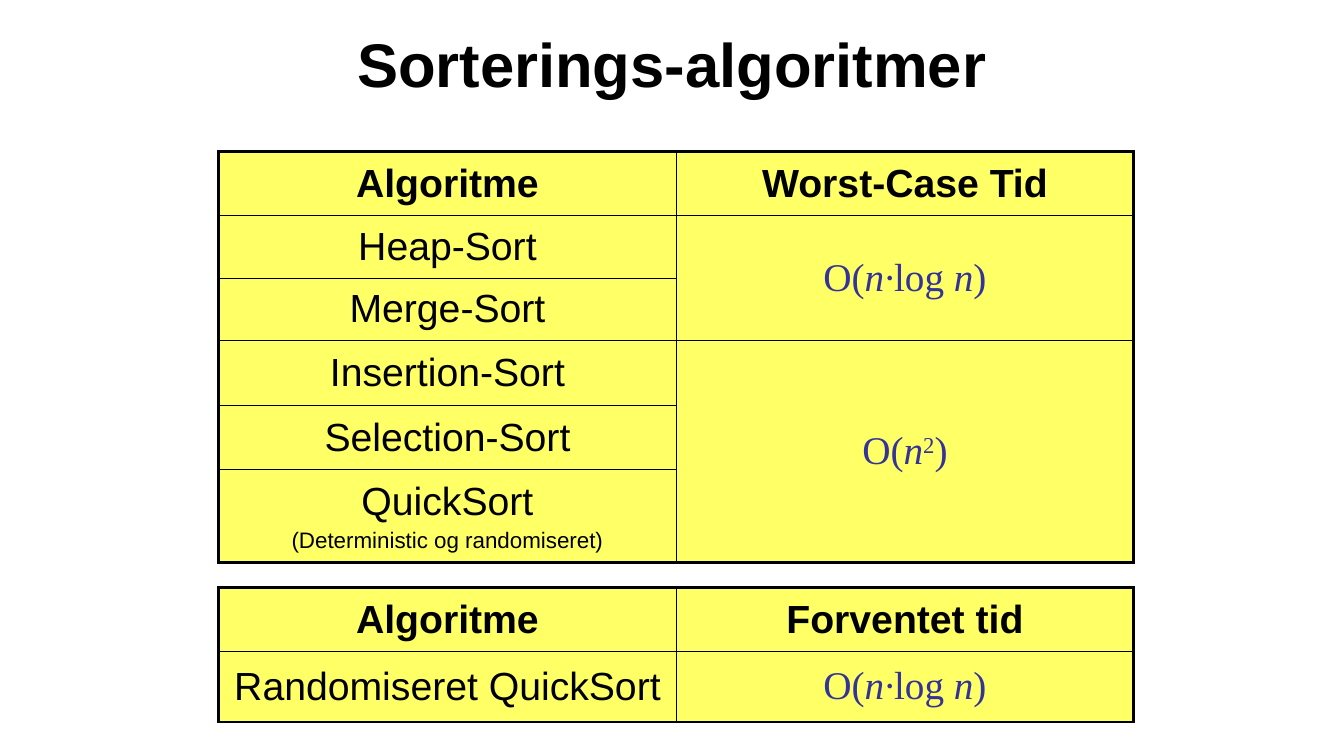
import lxml.etree
import pptx
import pptx.dml.color
import pptx.enum.text
import pptx.oxml.ns
import pptx.util

Cm, Pt = pptx.util.Cm, pptx.util.Pt
RGB = pptx.dml.color.RGBColor.from_string

THEME = {
    "ink": "000000", "formula": "333399", "cell": "FFFF66",
    "sans": "Arial", "serif": "Times New Roman",
    "title": 44, "body": 28, "note": 16,
    "outer": 2.25, "inner": 1,
}
BASE = {"size": "body", "name": "sans", "color": "ink", "bold": False, "italic": False}
FORMATS = {
    "title": {"size": "title", "bold": True},
    "head": {"bold": True},
    "text": {},
    "note": {"size": "note"},
    "math": {"name": "serif", "color": "formula"},
    "var": {"name": "serif", "color": "formula", "italic": True},
    "sup": {"name": "serif", "color": "formula"},
}

TITLE = [[("Sorterings-algoritmer", "title")]]
N_LOG_N = [[("O(", "math"), ("n·", "var"), ("log ", "math"), ("n", "var"), (")", "math")]]
N_SQUARED = [[("O(", "math"), ("n", "var"), ("2", "sup"), (")", "math")]]


def line(text, style="text"):
    return [[(text, style)]]


TABLES = [
    {
        "top": 3.81,
        "heights": [1.63, 1.57, 1.57, 1.63, 1.63, 2.34],
        "names": [
            line("Algoritme", "head"), line("Heap-Sort"), line("Merge-Sort"),
            line("Insertion-Sort"), line("Selection-Sort"),
            line("QuickSort") + line("(Deterministic og randomiseret)", "note"),
        ],
        "times": [(line("Worst-Case Tid", "head"), 1), (N_LOG_N, 2), (N_SQUARED, 3)],
    },
    {
        "top": 14.81,
        "heights": [1.6, 1.78],
        "names": [line("Algoritme", "head"), line("Randomiseret QuickSort")],
        "times": [(line("Forventet tid", "head"), 1), (N_LOG_N, 1)],
    },
]
LEFT, COLUMN = 5.51, 11.53


def write(tf, paragraphs):
    tf.word_wrap = True
    for i, runs in enumerate(paragraphs):
        p = tf.add_paragraph() if i else tf.paragraphs[0]
        p.alignment = pptx.enum.text.PP_ALIGN.CENTER
        if i:
            p.space_before = Pt(0.2 * THEME[{**BASE, **FORMATS[runs[0][1]]}["size"]])
        for text, style in runs:
            r = p.add_run()
            r.text = text
            fmt = {**BASE, **FORMATS[style]}
            r.font.color.rgb = RGB(THEME[fmt.pop("color")])
            fmt.update(size=Pt(THEME[fmt["size"]]), name=THEME[fmt["name"]])
            for key, value in fmt.items():
                setattr(r.font, key, value)
            if style == "sup":
                r.font._element.set("baseline", "30000")


def add_border(cell, side, width):
    qn = pptx.oxml.ns.qn
    ln = lxml.etree.SubElement(cell._tc.get_or_add_tcPr(), qn("a:ln" + side), w=str(Pt(width)))
    fill = lxml.etree.SubElement(ln, qn("a:solidFill"))
    lxml.etree.SubElement(fill, qn("a:srgbClr"), val=THEME["ink"])


def format_cell(cell, row, col, span, rows):
    on_edge = {"L": col == 0, "R": col == 1, "T": row == 0, "B": row + span == rows}
    for side, outer in on_edge.items():
        if not (cell.is_spanned and side == "T"):
            add_border(cell, side, THEME["outer" if outer else "inner"])
    cell.fill.solid()
    cell.fill.fore_color.rgb = RGB(THEME["cell"])
    cell.vertical_anchor = pptx.enum.text.MSO_ANCHOR.MIDDLE


def add_sorting_table(slide, top, heights, names, times):
    rows = len(heights)
    sp = slide.shapes.add_table(rows, 2, Cm(LEFT), Cm(top), Cm(2 * COLUMN), Cm(sum(heights)))
    table = sp.table
    for column in table.columns:
        column.width = Cm(COLUMN)
    for row, height in enumerate(heights):
        table.rows[row].height = Cm(height)
        cell = table.cell(row, 0)
        write(cell.text_frame, names[row])
        format_cell(cell, row, 0, 1, rows)
    row = 0
    for formula, span in times:
        cell = table.cell(row, 1)
        if span > 1:
            cell.merge(table.cell(row + span - 1, 1))
        write(cell.text_frame, formula)
        for offset in range(span):
            format_cell(table.cell(row + offset, 1), row + offset, 1, span - offset, rows)
        row += span


def main():
    prs = pptx.Presentation()
    prs.slide_width, prs.slide_height = Cm(33.87), Cm(19.05)
    slide = prs.slides.add_slide(prs.slide_layouts[6])
    tf = slide.shapes.add_textbox(Cm(LEFT), Cm(0), Cm(22.86), Cm(3.18)).text_frame
    tf.vertical_anchor = pptx.enum.text.MSO_ANCHOR.MIDDLE
    write(tf, TITLE)
    for table in TABLES:
        add_sorting_table(slide, **table)
    prs.save("out.pptx")


if __name__ == "__main__":
    main()
